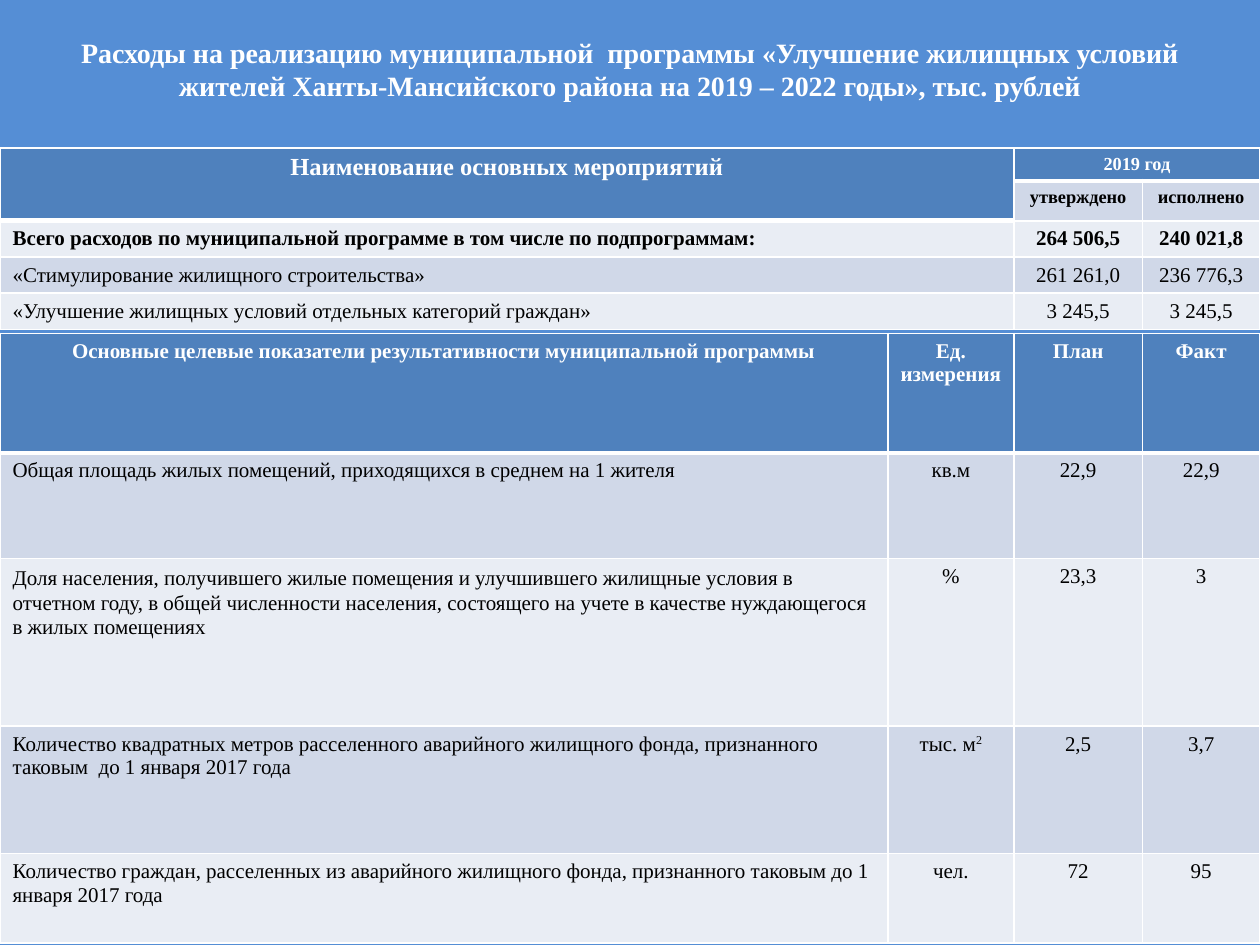
from dataclasses import dataclass

from lxml import etree
from pptx import Presentation
from pptx.dml.color import RGBColor
from pptx.enum import text as t
from pptx.oxml import ns
from pptx.util import Cm, Pt

FONT = "Times New Roman"
WHITE, BLACK = "FFFFFF", "000000"
BACKGROUND, HEADER, DARK, LIGHT = "558ED5", "4F81BD", "D0D8E8", "E9EDF4"


@dataclass
class Row:
    height: float  # cm
    texts: list[str]
    fill: str
    color: str = BLACK
    size: float = 12
    bold: bool = False
    first_size: float = 12
    first_spacing: float = 1.0
    bottom: float = 1  # border width, pt


def rgb(value: str) -> RGBColor:
    return RGBColor.from_string(value)


def add_run(p, text: str, size: float, color: str, bold: bool):
    r = p.add_run()
    r.text = text
    r.font.name, r.font.size, r.font.bold = FONT, Pt(size), bold
    r.font.color.rgb = rgb(color)
    return r


def add_border(cell, side: str, width: float) -> None:
    ln = etree.SubElement(cell._tc.get_or_add_tcPr(), ns.qn(f"a:ln{side}"), w=str(Pt(width)))
    fill = etree.SubElement(ln, ns.qn("a:solidFill"))
    etree.SubElement(fill, ns.qn("a:srgbClr"), val=WHITE)


def paint_cell(cell, row: Row) -> None:
    # Only header cells have a top edge: below, the row above draws it
    for side in "LRTB" if row.fill == HEADER else "LRB":
        add_border(cell, side, row.bottom if side == "B" else 1)
    cell.fill.solid()
    cell.fill.fore_color.rgb = rgb(row.fill)


def write_cell(cell, text: str, row: Row, first: bool) -> None:
    p = cell.text_frame.paragraphs[0]
    centred = not first or row.fill == HEADER
    p.alignment = t.PP_ALIGN.CENTER if centred else t.PP_ALIGN.LEFT
    if first and row.first_spacing != 1:
        p.line_spacing = row.first_spacing
    size = row.first_size if first else row.size
    # "^" marks the start of a superscript
    base, _, power = text.partition("^")
    add_run(p, base, size, row.color, row.bold)
    if power:
        r = add_run(p, power, size, row.color, row.bold)
        r.font._element.set("baseline", "30000")


def add_table(s, top: float, widths: list[float], rows: list[Row], merges=()):
    height = sum(row.height for row in rows)
    tbl = s.shapes.add_table(len(rows), len(widths), 0, Cm(top), Cm(sum(widths)), Cm(height)).table
    tbl.first_row = tbl.horz_banding = False
    for column, width in zip(tbl.columns, widths):
        column.width = Cm(width)
    for start, end in merges:
        tbl.cell(*start).merge(tbl.cell(*end))
    for i, row in enumerate(rows):
        tbl.rows[i].height = Cm(row.height)
        for j, text in enumerate(row.texts):
            cell = tbl.cell(i, j)
            # A cell covered by a vertical merge looks like the header
            covered = cell.is_spanned and j == 0
            paint_cell(cell, rows[0] if covered else row)
            if text:
                write_cell(cell, text, row, j == 0)


EXPENSES = [
    Row(0.67, ["Наименование основных мероприятий", "2019 год", ""], HEADER, WHITE,
        size=10.5, bold=True, first_size=14, bottom=3),
    Row(0.78, ["", "утверждено", "исполнено"], DARK, size=10.5, bold=True),
    Row(0.73, ["Всего расходов по муниципальной программе в том числе по подпрограммам:",
               "264 506,5", "240 021,8"], LIGHT, bold=True),
    Row(0.73, ["«Стимулирование жилищного строительства»", "261 261,0", "236 776,3"], DARK),
    Row(0.73, ["«Улучшение жилищных условий отдельных категорий граждан»",
               "3 245,5", "3 245,5"], LIGHT),
]

INDICATORS = [
    Row(2.41, ["Основные целевые показатели результативности муниципальной программы",
               "Ед. измерения", "План", "Факт"], HEADER, WHITE, bold=True, bottom=3),
    Row(2.13, ["Общая площадь жилых помещений, приходящихся в среднем на 1 жителя",
               "кв.м", "22,9", "22,9"], DARK),
    Row(3.38, ["Доля населения, получившего жилые помещения и улучшившего жилищные условия в "
               "отчетном году, в общей численности населения, состоящего на учете в качестве "
               "нуждающегося в жилых помещениях", "%", "23,3", "3"], LIGHT, first_spacing=1.07),
    Row(2.57, ["Количество квадратных метров расселенного аварийного жилищного фонда, "
               "признанного таковым  до 1 января 2017 года", "тыс. м^2", "2,5", "3,7"], DARK),
    Row(1.8, ["Количество граждан, расселенных из аварийного жилищного фонда, признанного "
              "таковым до 1 января 2017 года", "чел.", "72", "95"], LIGHT),
]


def main() -> None:
    prs = Presentation()
    prs.slide_width, prs.slide_height = Cm(25.4), Cm(19.05)
    s = prs.slides.add_slide(prs.slide_layouts[5])
    s.background.fill.solid()
    s.background.fill.fore_color.rgb = rgb(BACKGROUND)

    # Title
    title = s.shapes.title
    title.left, title.top, title.width, title.height = Cm(1.27), Cm(0), Cm(22.86), Cm(2.77)
    tf = title.text_frame
    tf.word_wrap, tf.auto_size = True, t.MSO_AUTO_SIZE.NONE
    tf.vertical_anchor = t.MSO_ANCHOR.MIDDLE
    p = tf.paragraphs[0]
    p.alignment = t.PP_ALIGN.CENTER
    add_run(p, "Расходы на реализацию муниципальной  программы «Улучшение жилищных условий "
               "жителей Ханты-Мансийского района на 2019 – 2022 годы», тыс. рублей",
            16, WHITE, True)

    # Expenses, then target indicators; the last two columns line up
    values = [2.59, 2.37]
    add_table(s, 2.98, [20.44, *values], EXPENSES,
              merges=[((0, 0), (1, 0)), ((0, 1), (0, 2))])
    add_table(s, 6.72, [17.9, 2.54, *values], INDICATORS)

    prs.save("out.pptx")


if __name__ == "__main__":
    main()
